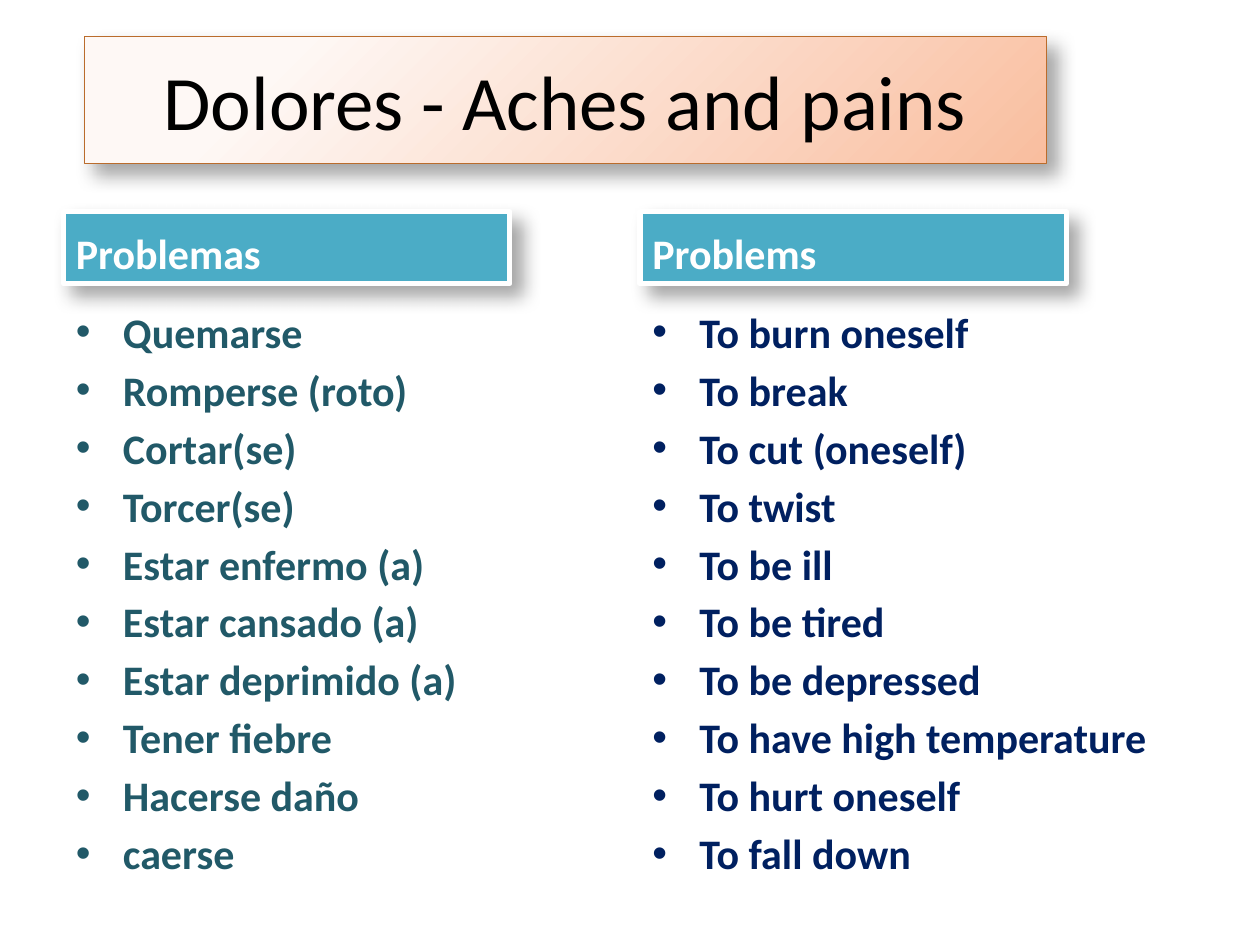
from lxml import etree
from pptx import Presentation
from pptx.dml.color import RGBColor
from pptx.enum.shapes import MSO_SHAPE
from pptx.enum.text import MSO_ANCHOR, MSO_AUTO_SIZE, PP_ALIGN
from pptx.oxml import parse_xml
from pptx.oxml.ns import nsdecls, qn
from pptx.util import Cm, Pt

FONT = "Calibri"
COLORS = {
    "title": "000000", "title_line": "BA6C2C",
    "light": "FEF8F5", "peach": "F9BE9F",
    "header": "4BACC6", "white": "FFFFFF",
    "spanish": "215968", "english": "002060", "shadow": "000000",
}
SPANISH = ["Quemarse", "Romperse (roto)", "Cortar(se)", "Torcer(se)",
           "Estar enfermo (a)", "Estar cansado (a)", "Estar deprimido (a)",
           "Tener fiebre", "Hacerse daño", "caerse"]
ENGLISH = ["To burn oneself", "To break", "To cut (oneself)", "To twist",
           "To be ill", "To be tired", "To be depressed",
           "To have high temperature", "To hurt oneself", "To fall down"]


def rgb(name):
    return RGBColor.from_string(COLORS[name])


def add_run(p, text, size, color, bold=False):
    r = p.add_run()
    r.text = text
    r.font.name = FONT
    r.font.size = Pt(size)
    r.font.bold = bold
    r.font.color.rgb = rgb(color)


def set_outline(sp, color, width):
    sp.line.color.rgb = rgb(color)
    sp.line.width = Pt(width)


def add_shadow(sp):
    sp._element.spPr.append(parse_xml(
        f'<a:effectLst {nsdecls("a")}>'
        '<a:outerShdw blurRad="130000" dist="101600" dir="2700000" '
        'algn="tl" rotWithShape="0">'
        f'<a:srgbClr val="{COLORS["shadow"]}"><a:alpha val="35000"/></a:srgbClr>'
        '</a:outerShdw></a:effectLst>'))


def set_radial_fill(sp):
    sp.fill.solid()
    spPr = sp._element.spPr
    spPr.replace(spPr.find(qn("a:solidFill")), parse_xml(
        f'<a:gradFill {nsdecls("a")} rotWithShape="1"><a:gsLst>'
        f'<a:gs pos="20000"><a:srgbClr val="{COLORS["light"]}"/></a:gs>'
        f'<a:gs pos="100000"><a:srgbClr val="{COLORS["peach"]}"/></a:gs>'
        '</a:gsLst><a:path path="circle">'
        '<a:fillToRect l="-15000" t="-15000" r="115000" b="115000"/>'
        '</a:path></a:gradFill>'))


def set_bullet(p):
    pPr = p._p.get_or_add_pPr()
    pPr.set("marL", str(Cm(0.95)))
    pPr.set("indent", str(-Cm(0.95)))
    etree.SubElement(pPr, qn("a:buFont")).set("typeface", "Arial")
    etree.SubElement(pPr, qn("a:buChar")).set("char", "•")


def add_title(s, x, y, w, h):
    sp = s.shapes.title
    sp.left, sp.top, sp.width, sp.height = Cm(x), Cm(y), Cm(w), Cm(h)
    set_radial_fill(sp)
    set_outline(sp, "title_line", 0.75)
    add_shadow(sp)
    tf = sp.text_frame
    tf.auto_size = MSO_AUTO_SIZE.NONE
    tf.vertical_anchor = MSO_ANCHOR.MIDDLE
    p = tf.paragraphs[0]
    p.alignment = PP_ALIGN.CENTER
    add_run(p, "Dolores - Aches and pains", 44, "title")


def add_header(s, x, y, w, h, text):
    sp = s.shapes.add_shape(MSO_SHAPE.RECTANGLE, Cm(x), Cm(y), Cm(w), Cm(h))
    sp.fill.solid()
    sp.fill.fore_color.rgb = rgb("header")
    set_outline(sp, "white", 3)
    add_shadow(sp)
    tf = sp.text_frame
    tf.word_wrap = True
    tf.vertical_anchor = MSO_ANCHOR.BOTTOM
    p = tf.paragraphs[0]
    p.alignment = PP_ALIGN.LEFT
    add_run(p, text, 24, "white", True)


def add_list(s, x, y, w, h, items, color):
    tf = s.shapes.add_textbox(Cm(x), Cm(y), Cm(w), Cm(h)).text_frame
    tf.word_wrap = True
    for i, item in enumerate(items):
        p = tf.add_paragraph() if i else tf.paragraphs[0]
        p.space_before = Pt(4.3)
        set_bullet(p)
        add_run(p, item, 24, color, True)


def add_column(s, x, y, w, h, header_w, header, items, color):
    add_header(s, x, y, header_w, 1.45, header)
    add_list(s, x, y + 1.78, w, h - 1.78, items, color)


def main():
    prs = Presentation()
    prs.slide_width, prs.slide_height = Cm(25.4), Cm(19.05)
    s = prs.slides.add_slide(prs.slide_layouts[5])
    add_title(s, 1.7, 0.73, 19.4, 2.57)
    add_column(s, 1.28, 4.27, 11.23, 13.67, 9, "Problemas", SPANISH, "spanish")
    add_column(s, 12.9, 4.27, 11.23, 13.87, 8.6, "Problems", ENGLISH, "english")
    prs.save("out.pptx")


if __name__ == "__main__":
    main()
